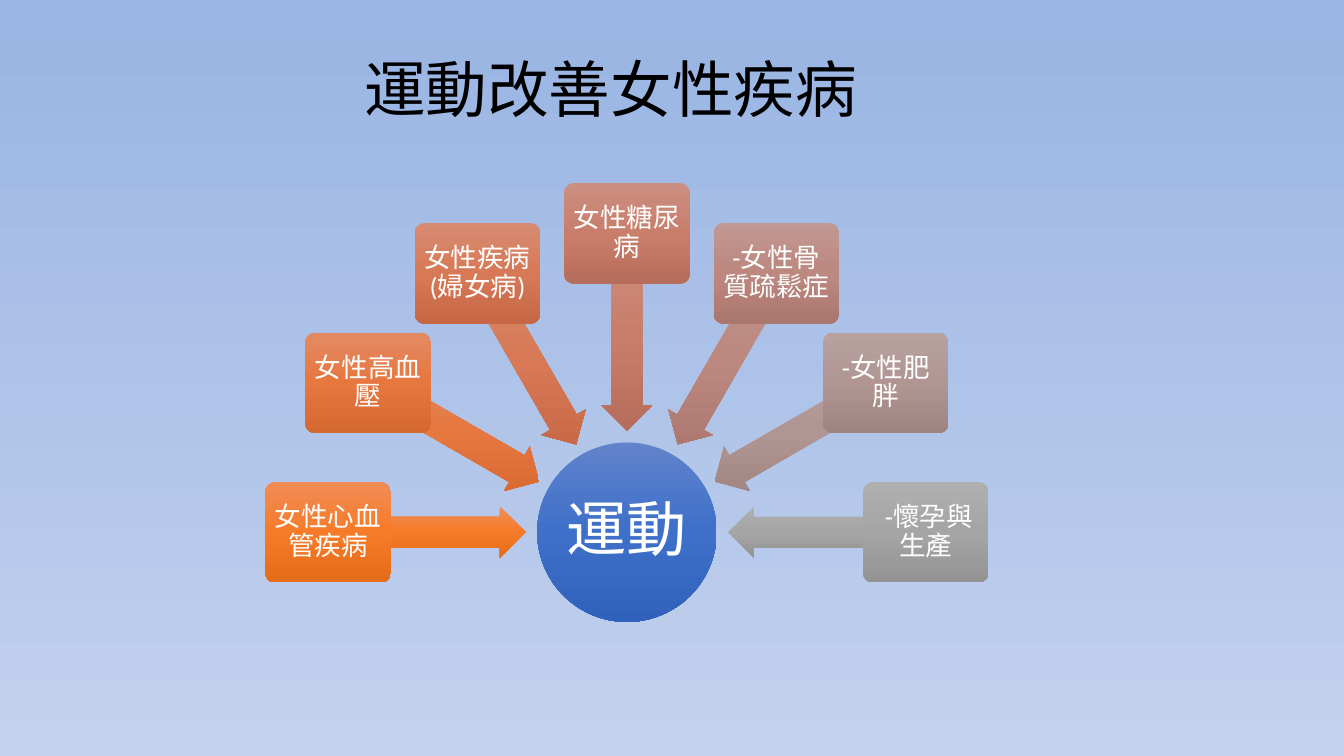
from copy import deepcopy
from math import cos, radians, sin

from pptx import Presentation
from pptx.dml.color import RGBColor
from pptx.enum.shapes import MSO_SHAPE
from pptx.enum.text import MSO_ANCHOR, PP_ALIGN
from pptx.oxml.ns import qn
from pptx.util import Pt


def rgb(value):
    return RGBColor.from_string(value)


class RadialSlide:
    """Draws gradient shapes and text placed around one centre."""

    body_font = "Calibri"
    cjk_font = "Noto Sans CJK SC"
    white = "FFFFFF"
    black = "000000"
    centre = (447.84, 380.16)

    def __init__(self, prs):
        self.s = prs.slides.add_slide(prs.slide_layouts[6])

    def gradient(self, fill, owner, colours):
        fill.gradient()
        fill.gradient_angle = 270
        grad = owner._element.find(".//" + qn("a:gradFill"))
        grad.set("rotWithShape", "0")
        stops = grad.find(qn("a:gsLst"))
        for _ in colours[2:]:
            stops.insert(1, deepcopy(stops[0]))
        for i, (stop, colour) in enumerate(zip(fill.gradient_stops, colours)):
            stop.position = i / (len(colours) - 1)
            stop.color.rgb = rgb(colour)

    def background(self, colours):
        self.gradient(self.s.background.fill, self.s, colours)

    def label(self, sp, text, size, font, colour, inset):
        tf = sp.text_frame
        tf.word_wrap = True
        tf.vertical_anchor = MSO_ANCHOR.MIDDLE
        tf.margin_left = tf.margin_right = Pt(inset)
        tf.margin_top = tf.margin_bottom = Pt(inset)
        tf.text = text
        p = tf.paragraphs[0]
        p.alignment = PP_ALIGN.CENTER
        p.line_spacing = 0.9
        r = p.runs[0]
        r.font.size = Pt(size)
        r.font.name = font
        r.font.color.rgb = rgb(colour)
        ea = r._r.get_or_add_rPr().makeelement(qn("a:ea"), {"typeface": self.cjk_font})
        r._r.rPr.find(qn("a:latin")).addnext(ea)

    def title(self, text, left, top, width, height):
        sp = self.s.shapes.add_textbox(Pt(left), Pt(top), Pt(width), Pt(height))
        self.label(sp, text, 44, self.cjk_font, self.black, 5)

    def shape(self, kind, angle, radius, width, height, colours):
        x = self.centre[0] - radius * cos(radians(angle))
        y = self.centre[1] - radius * sin(radians(angle))
        sp = self.s.shapes.add_shape(
            kind, Pt(x - width / 2), Pt(y - height / 2), Pt(width), Pt(height))
        sp.shadow.inherit = False
        sp.line.fill.background()
        self.gradient(sp.fill, sp, colours)
        return sp

    def hub(self, text, colours):
        sp = self.shape(MSO_SHAPE.OVAL, 0, 0, 128.2, 128.2, colours)
        self.label(sp, text, 43, self.body_font, self.white, 2)

    def arrow(self, angle, colours):
        sp = self.shape(MSO_SHAPE.LEFT_ARROW, angle, 143, 141.1, 36.6, colours)
        sp.adjustments[0] = 0.6
        sp.adjustments[1] = 0.5
        sp.rotation = (180 + angle) % 360

    def box(self, text, angle, colours):
        sp = self.shape(MSO_SHAPE.ROUNDED_RECTANGLE, angle, 213.5, 89.8, 71.8, colours)
        sp.adjustments[0] = 0.1
        self.label(sp, text, 19, self.body_font, self.white, 3)


CONDITIONS = [
    ("女性心血管疾病", ("F18C57", "F67B28", "E56C19")),
    ("女性高血壓", ("E38A63", "E6773F", "D56730")),
    ("女性疾病(婦女病)", ("D78B72", "D77956", "C66846")),
    ("女性糖尿病", ("CB8F81", "C97E6B", "B76D5B")),
    ("-女性骨質疏鬆症", ("C19791", "BC8880", "AA766E")),
    ("-女性肥胖", ("B7A2A0", "B09593", "9E8381")),
    (" -懷孕與生產", ("AFAFAF", "A5A5A5", "939393")),
]


def main():
    prs = Presentation()
    prs.slide_width = Pt(960)
    prs.slide_height = Pt(540)
    slide = RadialSlide(prs)
    slide.background(("9AB5E4", "C2D1ED"))
    slide.title("運動改善女性疾病", 151.2, 20.9, 570.2, 90)
    slide.hub("運動", ("6183CB", "3E70CA", "3062BB"))
    step = 180 / (len(CONDITIONS) - 1)
    for i, (text, colours) in enumerate(CONDITIONS):
        slide.arrow(i * step, colours)
        slide.box(text, i * step, colours)
    prs.save("out.pptx")


if __name__ == "__main__":
    main()
